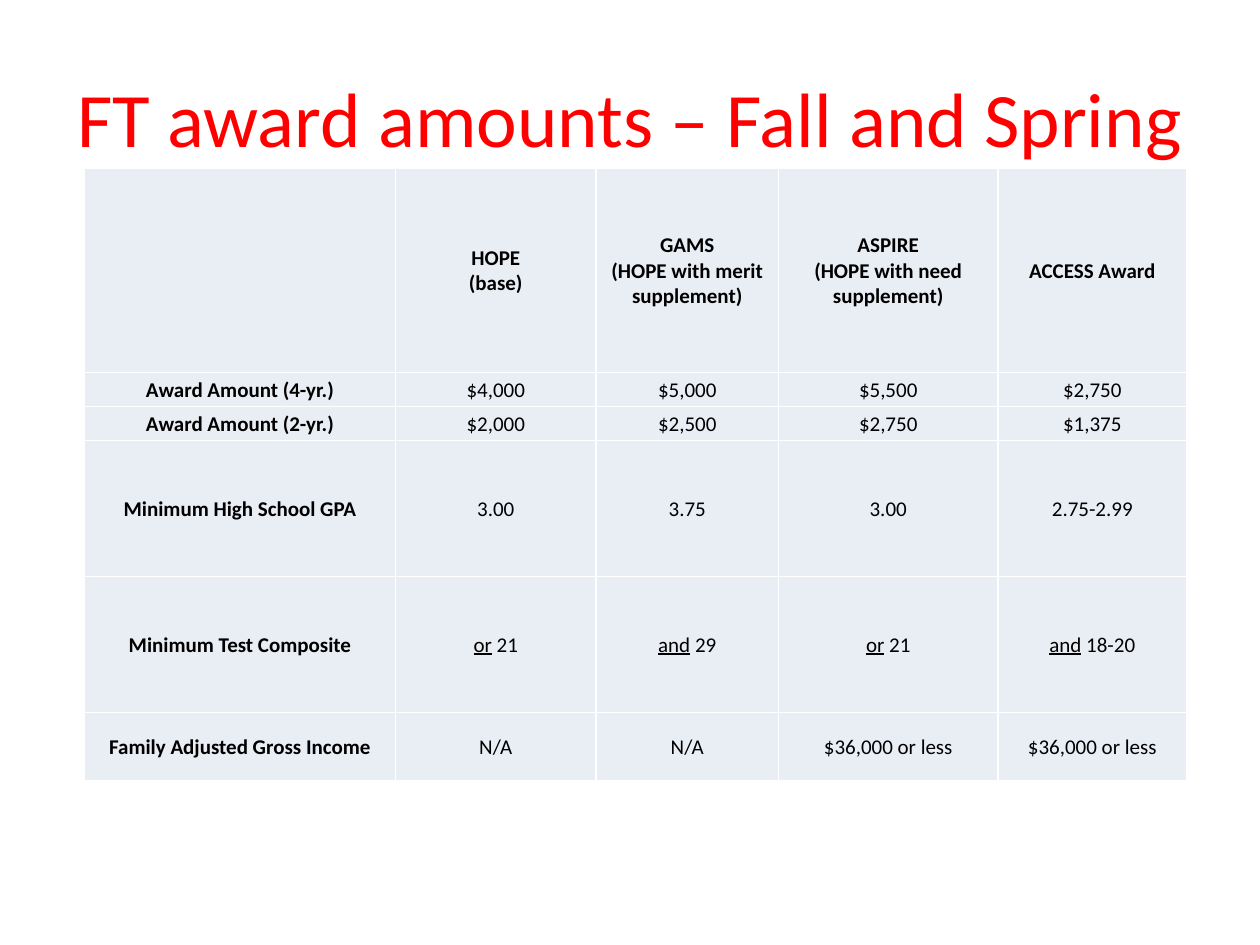
"""Build a slide with a table of full-time award amounts."""
from copy import deepcopy
from dataclasses import dataclass

from lxml import etree
from pptx import Presentation
from pptx.dml.color import RGBColor
from pptx.enum.text import MSO_ANCHOR, PP_ALIGN
from pptx.oxml.ns import qn
from pptx.util import Inches, Pt

CENTER = PP_ALIGN.CENTER
MIDDLE = MSO_ANCHOR.MIDDLE
SLIDE_WIDTH, SLIDE_HEIGHT = Inches(10), Inches(7.5)
BORDER_SIDES = ("a:lnL", "a:lnR", "a:lnT", "a:lnB")

COLUMN_PERCENTS = (24.7, 15.9, 14.5, 17.4, 15)
ROW_UNITS = (6, 1, 1, 4, 4, 2)
ROW_UNIT_PERCENT = 3.6
AWARD_ROWS = (
    ("", "HOPE\v(base)", "GAMS\v(HOPE with merit supplement)",
     "ASPIRE\v(HOPE with need supplement)", "ACCESS Award"),
    ("Award Amount (4-yr.)", "$4,000", "$5,000", "$5,500", "$2,750"),
    ("Award Amount (2-yr.)", "$2,000", "$2,500", "$2,750", "$1,375"),
    ("Minimum High School GPA", "3.00", "3.75", "3.00", "2.75-2.99"),
    ("Minimum Test Composite", "or 21", "and 29", "or 21", "and 18-20"),
    ("Family Adjusted Gross Income", "N/A", "N/A", "$36,000 or less", "$36,000 or less"),
)
UNDERLINED_WORDS = ("or", "and")


@dataclass(frozen=True)
class Theme:
    font: str = "Calibri"
    title_size: int = 44
    cell_size: int = 12
    title_color: str = "FF0000"
    text_color: str = "000000"
    cell_fill: str = "E9EDF4"
    border_color: str = "FFFFFF"
    border_width: int = 1


def across(percent):
    return int(SLIDE_WIDTH * percent / 100)


def down(percent):
    return int(SLIDE_HEIGHT * percent / 100)


class SlideBuilder:
    def __init__(self, slide, theme):
        self.slide = slide
        self.theme = theme

    def format_run(self, run, size, color, **extra):
        values = {"name": self.theme.font, "size": Pt(size), **extra}
        for name, value in values.items():
            setattr(run.font, name, value)
        run.font.color.rgb = RGBColor.from_string(color)

    def add_title(self, text, left, top, width, height):
        title = self.slide.shapes.title
        box = {
            "left": across(left), "top": down(top),
            "width": across(width), "height": down(height),
        }
        for name, value in box.items():
            setattr(title, name, value)
        title.text_frame.vertical_anchor = MIDDLE
        paragraph = title.text_frame.paragraphs[0]
        paragraph.alignment = CENTER
        run = paragraph.add_run()
        run.text = text
        self.format_run(run, self.theme.title_size, self.theme.title_color)

    def add_table(self, rows, left, top, column_percents, row_percents):
        frame = self.slide.shapes.add_table(
            len(rows), len(column_percents), across(left), down(top),
            across(sum(column_percents)), down(sum(row_percents)))
        table = frame.table
        table.first_row = table.horz_banding = False
        for column, percent in zip(table.columns, column_percents):
            column.width = across(percent)
        for row, percent in zip(table.rows, row_percents):
            row.height = down(percent)
        for row_index, texts in enumerate(rows):
            for column_index, text in enumerate(texts):
                is_heading = row_index == 0 or column_index == 0
                self.fill_cell(table.cell(row_index, column_index), text, is_heading)

    def fill_cell(self, cell, text, bold):
        self.add_borders(cell)
        cell.fill.solid()
        cell.fill.fore_color.rgb = RGBColor.from_string(self.theme.cell_fill)
        layout = {
            "vertical_anchor": MIDDLE, "margin_left": Inches(0.01),
            "margin_right": Inches(0.01), "margin_top": Inches(0.01), "margin_bottom": 0,
        }
        for name, value in layout.items():
            setattr(cell, name, value)
        if text:
            self.write_cell(cell.text_frame.paragraphs[0], text, bold)

    def write_cell(self, paragraph, text, bold):
        paragraph.alignment = CENTER
        first_word, space, rest = text.partition(" ")
        if first_word in UNDERLINED_WORDS:
            paragraph.text = first_word
            paragraph.add_run().text = space + rest
        else:
            paragraph.text = text
        for run in paragraph.runs:
            self.format_run(run, self.theme.cell_size, self.theme.text_color,
                            bold=bold, underline=run.text in UNDERLINED_WORDS)
        for line_break in paragraph._p.findall(qn("a:br")):
            line_break.append(deepcopy(paragraph.runs[0].font._element))

    def add_borders(self, cell):
        properties = cell._tc.get_or_add_tcPr()
        for side in BORDER_SIDES:
            line = etree.SubElement(properties, qn(side), w=str(Pt(self.theme.border_width)))
            fill = etree.SubElement(line, qn("a:solidFill"))
            etree.SubElement(fill, qn("a:srgbClr"), val=self.theme.border_color)


def main():
    presentation = Presentation()
    presentation.slide_width, presentation.slide_height = SLIDE_WIDTH, SLIDE_HEIGHT
    title_only = presentation.slide_layouts[5]
    builder = SlideBuilder(presentation.slides.add_slide(title_only), Theme())
    builder.add_title("FT award amounts – Fall and Spring", 5, 4, 90, 16.67)
    row_percents = [units * ROW_UNIT_PERCENT for units in ROW_UNITS]
    builder.add_table(AWARD_ROWS, 6.7, 17.8, COLUMN_PERCENTS, row_percents)
    presentation.save("out.pptx")


if __name__ == "__main__":
    main()
